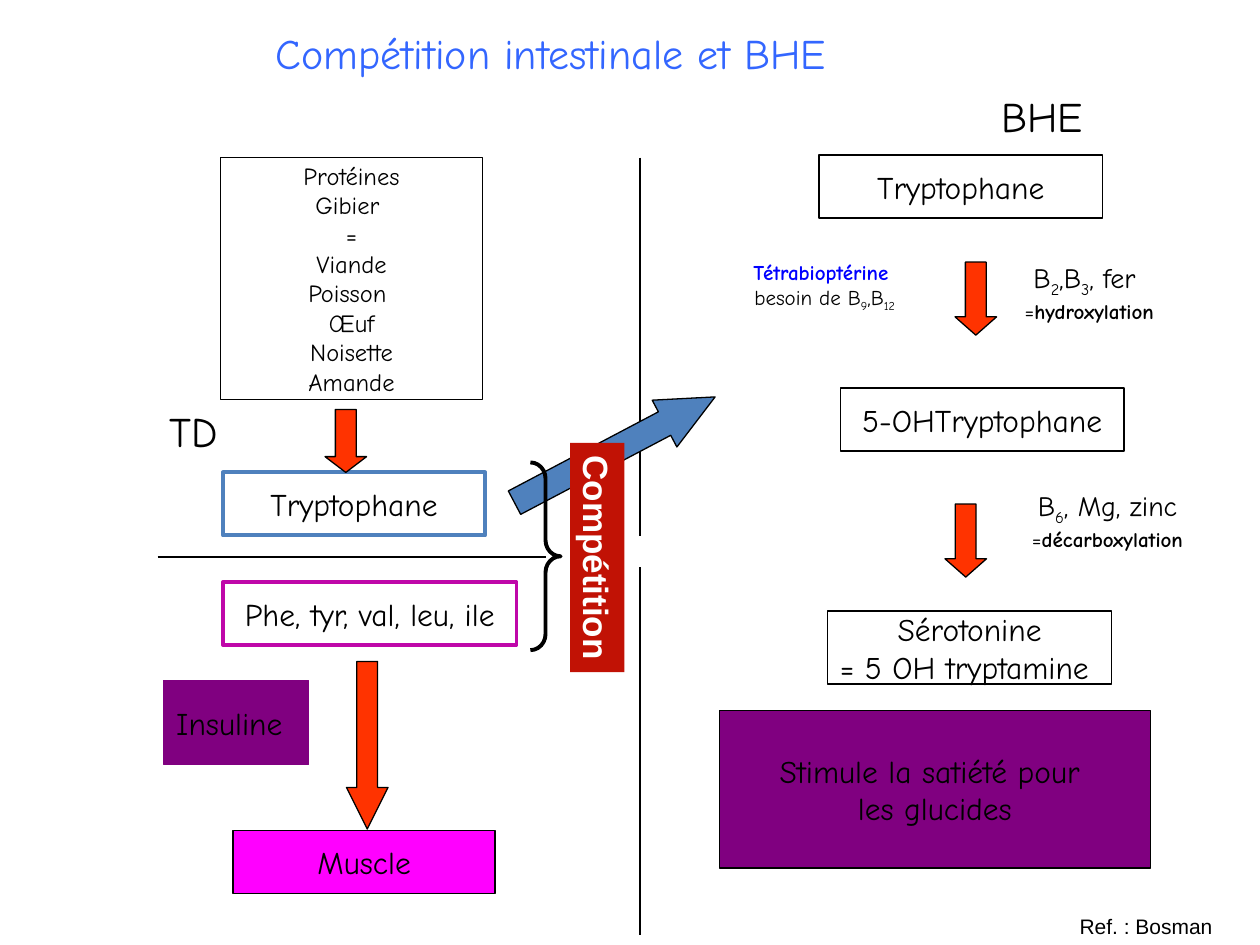
from pptx import Presentation
from pptx.dml.color import RGBColor
from pptx.enum.shapes import MSO_CONNECTOR as Link, MSO_SHAPE as Kind
from pptx.enum.text import MSO_ANCHOR as Anchor, PP_ALIGN as Align
from pptx.util import Pt
from lxml import etree

PX = 9144  # 100 px to the inch
BLACK = RGBColor(0x00, 0x00, 0x00)
WHITE = RGBColor(0xFF, 0xFF, 0xFF)
AZURE = RGBColor(0x33, 0x66, 0xFF)
BLUE = RGBColor(0x00, 0x00, 0xFF)
STEEL = RGBColor(0x4F, 0x81, 0xBD)
RED = RGBColor(0xFF, 0x33, 0x00)
BRICK = RGBColor(0xC1, 0x12, 0x05)
PINK = RGBColor(0xFF, 0x00, 0xFF)
PLUM = RGBColor(0xBF, 0x07, 0xA9)
PURPLE = RGBColor(0x80, 0x00, 0x80)
NS = "http://schemas.openxmlformats.org/drawingml/2006/main"


class Board:
    font = "Comic Neue"
    thin, thick = 0.75, 2.25

    def __init__(self, slide):
        self.slide = slide

    def fill_text(self, shape, lines, size, color=BLACK, align=Align.CENTER,
                  font=None, bold=False, wrap=False):
        """Each line is a string, or a dict with runs and its own style."""
        frame = shape.text_frame
        frame.word_wrap = wrap
        for i, line in enumerate(lines):
            if isinstance(line, str):
                line = {"runs": [line]}
            para = frame.paragraphs[0] if i == 0 else frame.add_paragraph()
            para.alignment = align
            para.font.name = font or self.font
            para.font.size = Pt(line.get("size", size))
            para.font.bold = line.get("bold", bold)
            para.font.color.rgb = line.get("color", color)
            for part in line["runs"]:
                text, style = (part, "") if isinstance(part, str) else part
                run = para.add_run()
                run.text = text
                if style == "bold":
                    run.font.bold = True
                elif style == "sub":
                    run._r.get_or_add_rPr().set("baseline", "-25000")

    def shape(self, kind, x, y, w, h, fill=None, line=BLACK, width=thin,
              turn=0, adj=()):
        item = self.slide.shapes.add_shape(kind, x * PX, y * PX, w * PX, h * PX)
        item.shadow.inherit = False
        item.rotation = turn
        for i, value in enumerate(adj):
            item.adjustments[i] = value
        if fill is None:
            item.fill.background()
        else:
            item.fill.solid()
            item.fill.fore_color.rgb = fill
        if line is None:
            item.line.fill.background()
        else:
            item.line.color.rgb = line
            item.line.width = Pt(width)
        return item

    def box(self, x, y, w, h, lines, size=18, align=Align.CENTER, **look):
        item = self.shape(Kind.RECTANGLE, x, y, w, h, **look)
        self.fill_text(item, lines, size, align=align)

    def text(self, x, y, w, h, lines, size, **style):
        item = self.slide.shapes.add_textbox(x * PX, y * PX, w * PX, h * PX)
        self.fill_text(item, lines, size, **style)

    def down(self, x, y, h, head):
        self.shape(Kind.DOWN_ARROW, x, y, 33, h, fill=RED, adj=(0.5, head))

    def rule(self, x1, y1, x2, y2):
        item = self.slide.shapes.add_connector(
            Link.STRAIGHT, x1 * PX, y1 * PX, x2 * PX, y2 * PX)
        item.line.color.rgb = BLACK
        item.line.width = Pt(self.thin)
        etree.SubElement(item._element.spPr, f"{{{NS}}}effectLst")


def main():
    deck = Presentation()
    deck.slide_width, deck.slide_height = 1000 * PX, 750 * PX
    board = Board(deck.slides.add_slide(deck.slide_layouts[6]))

    # Right side: from tryptophan to serotonin
    board.box(650, 123, 225, 50, ["Tryptophane"])
    board.box(667, 308, 225, 50, ["5-OHTryptophane"])
    board.box(657, 485, 225, 58, ["Sérotonine", "= 5 OH tryptamine "])
    board.down(758, 208, 58, 0.44)
    board.down(750, 400, 58, 0.44)

    # Cofactors
    board.text(791, 202, 147, 57, [
        {"runs": ["B", ("2", "sub"), ",B", ("3", "sub"), ", fer "]},
        {"runs": ["=", ("hydroxylation", "bold")], "size": 12},
    ], 16, wrap=True)
    board.text(579, 201, 151, 50, [
        {"runs": ["Tétrabioptérine "], "color": BLUE, "bold": True},
        {"runs": ["besoin de B", ("9", "sub"), ",B", ("12", "sub")]},
    ], 12)
    board.text(758, 383, 242, 57, [
        {"runs": ["B", ("6", "sub"), ", Mg, zinc"]},
        {"runs": ["=", ("décarboxylation", "bold")], "size": 12},
    ], 16, wrap=True)

    # Barrier between the two sides, and the passage through it
    for top, end in ((125, 425), (450, 575), (575, 742)):
        board.rule(508, top, 508, end)
    board.shape(Kind.RIGHT_ARROW, 398, 336, 180, 42, fill=STEEL,
                turn=332.2, adj=(0.5, 1.08))

    # Left side: digestive tract
    board.box(175, 125, 208, 192, [
        "Protéines", "Gibier ", "=", "Viande", "Poisson ", "Œuf",
        "Noisette", "Amande"], size=14)
    board.box(185, 659, 208, 50, ["Muscle"], fill=PINK)
    board.box(177, 375, 208, 50, ["Tryptophane"],
              line=STEEL, width=board.thick)
    board.box(177, 462, 233, 50, ["Phe, tyr, val, leu, ile"],
              line=PLUM, width=board.thick)
    board.rule(125, 442, 433, 442)
    board.box(130, 540, 115, 67, ["Insuline"], align=Align.LEFT,
              fill=PURPLE, line=PURPLE)
    board.down(275, 525, 133, 1)
    board.down(258, 325, 50, 0.38)

    # Outcome
    board.box(571, 564, 342, 125, ["Stimule la satiété pour ", "les glucides"],
              fill=PURPLE)

    # Headings and reference
    left = Align.LEFT
    board.text(785, 67, 90, 50, ["BHE"], 24, align=left, wrap=True)
    board.text(125, 317, 67, 50, ["TD"], 24, align=left)
    board.text(209, 17, 535, 50, ["Compétition intestinale et BHE"], 24,
               color=AZURE, align=left, wrap=True)
    board.text(847, 720, 126, 30, ["Ref. : Bosman"], 12, align=left,
               font="Arial")

    # Competition
    board.shape(Kind.RIGHT_BRACE, 421, 367, 24, 149, width=board.thick,
                adj=(0.53, 0.5))
    label = board.shape(Kind.RECTANGLE, 383, 421, 182, 43, fill=BRICK,
                        line=None, turn=90)
    label.text_frame.vertical_anchor = Anchor.TOP
    board.fill_text(label, ["Compétition"], 20, color=WHITE, align=left,
                    font="Arial", bold=True)

    deck.save("out.pptx")


if __name__ == "__main__":
    main()
